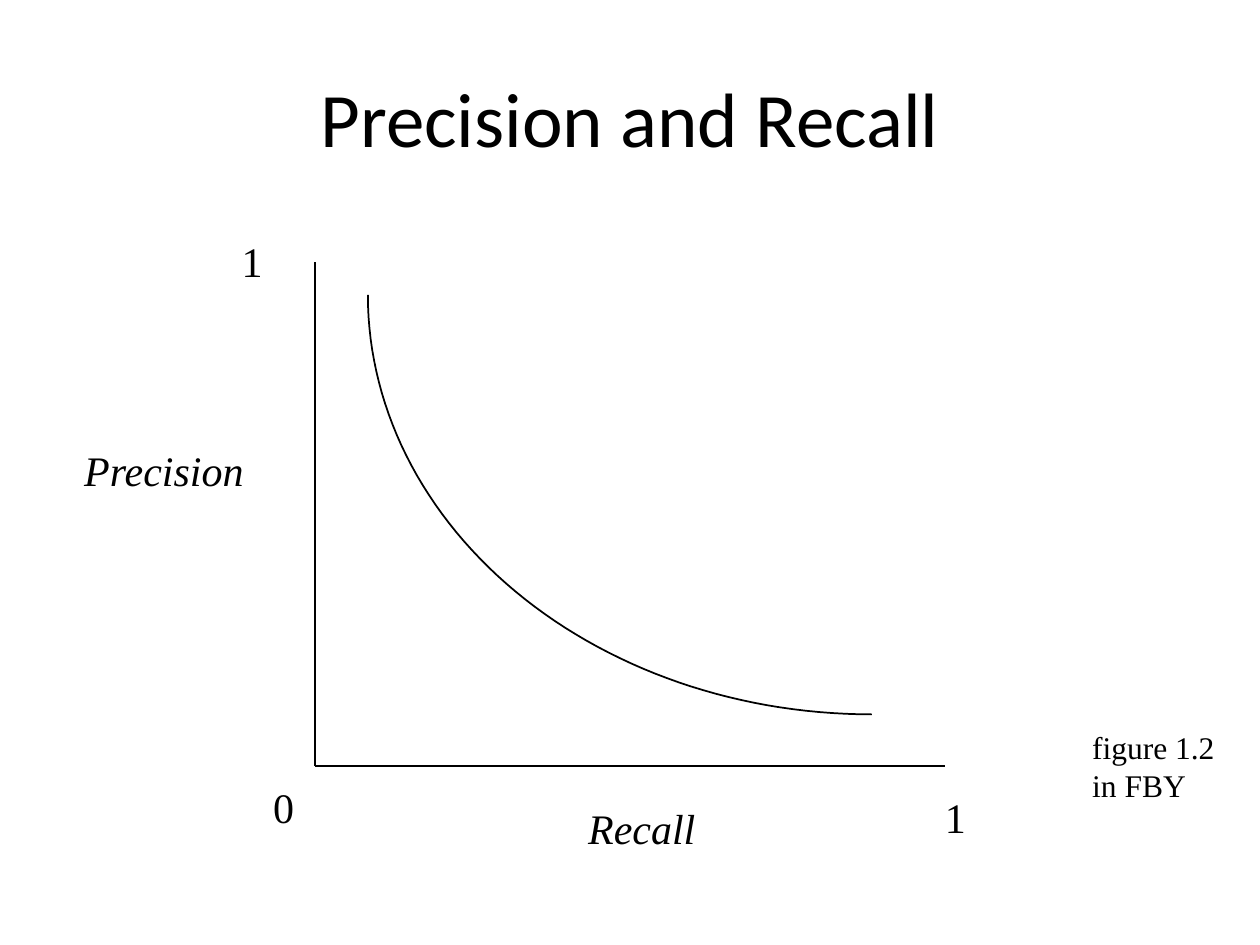
import math

import pptx
import pptx.dml.color
import pptx.enum.shapes
import pptx.enum.text
import pptx.oxml
import pptx.util

Inches = pptx.util.Inches
SLIDE_W, SLIDE_H = 10, 7.5
INK = "000000"

TITLE = "Precision and Recall"
TITLE_BOX = (0.5, 0.3, 9, 1.25)

ORIGIN = (2.5, 6.08)
AXIS_ENDS = [(2.5, 2.08), (7.5, 6.08)]
CURVE_CENTER = (6.92, 2.34)
CURVE_RADII = (4, 3.33)
CURVE_STEPS = 60

NUMBER = {"size": pptx.util.Pt(24), "italic": False}
AXIS_NAME = {"size": pptx.util.Pt(24), "italic": True}
CITATION = {"size": pptx.util.Pt(18), "italic": False}

# lines of text, box (left, top, width, height), font format, wraps
LABELS = [
    (["1"], (1.82, 1.82, 0.36, 0.5), NUMBER, False),
    (["1"], (7.4, 6.23, 0.36, 0.5), NUMBER, False),
    (["0"], (2.07, 6.15, 0.36, 0.5), NUMBER, False),
    (["Precision"], (0.57, 3.48, 1.48, 0.5), AXIS_NAME, False),
    (["Recall"], (4.57, 6.32, 1.35, 0.5), AXIS_NAME, True),
    (["figure 1.2", "in FBY"], (8.57, 5.73, 1.17, 0.7), CITATION, False),
]


def color(value):
    return pptx.dml.color.RGBColor.from_string(value)


def format_font(font, name, formats):
    font.name = name
    font.color.rgb = color(INK)
    for attribute, value in formats.items():
        setattr(font, attribute, value)


def format_line(line):
    line.color.rgb = color(INK)
    line.width = pptx.util.Pt(1)


def add_title(slide):
    title = slide.shapes.title
    title.left, title.top, title.width, title.height = map(Inches, TITLE_BOX)
    title.text_frame.text = TITLE
    font = title.text_frame.paragraphs[0].runs[0].font
    format_font(font, "Calibri", {"size": pptx.util.Pt(44)})


def add_axis(slide, start, end):
    axis = slide.shapes.add_connector(
        pptx.enum.shapes.MSO_CONNECTOR.STRAIGHT, *map(Inches, start + end))
    format_line(axis.line)
    axis._element.spPr.append(pptx.oxml.parse_xml(
        '<a:effectLst xmlns:a='
        '"http://schemas.openxmlformats.org/drawingml/2006/main"/>'))


def add_curve(slide):
    """Draw the lower left quarter of an ellipse as an open outline."""
    points = []
    for step in range(CURVE_STEPS + 1):
        angle = math.pi / 2 * (1 + step / CURVE_STEPS)
        points.append((Inches(CURVE_CENTER[0] + CURVE_RADII[0] * math.cos(angle)),
                       Inches(CURVE_CENTER[1] + CURVE_RADII[1] * math.sin(angle))))
    builder = slide.shapes.build_freeform(*points[0])
    builder.add_line_segments(points[1:], close=False)
    curve = builder.convert_to_shape()
    curve.shadow.inherit = False
    curve.fill.background()
    format_line(curve.line)


def add_label(slide, lines, box, formats, wraps):
    frame = slide.shapes.add_textbox(*map(Inches, box)).text_frame
    frame.word_wrap = wraps
    frame.auto_size = pptx.enum.text.MSO_AUTO_SIZE.SHAPE_TO_FIT_TEXT
    frame.text = "\n".join(lines)
    for paragraph in frame.paragraphs:
        format_font(paragraph.runs[0].font, "Times New Roman", formats)


def main():
    deck = pptx.Presentation()
    deck.slide_width, deck.slide_height = Inches(SLIDE_W), Inches(SLIDE_H)
    slide = deck.slides.add_slide(deck.slide_layouts.get_by_name("Title Only"))
    add_title(slide)
    for end in AXIS_ENDS:
        add_axis(slide, ORIGIN, end)
    add_curve(slide)
    for label in LABELS:
        add_label(slide, *label)
    deck.save("out.pptx")


if __name__ == "__main__":
    main()
